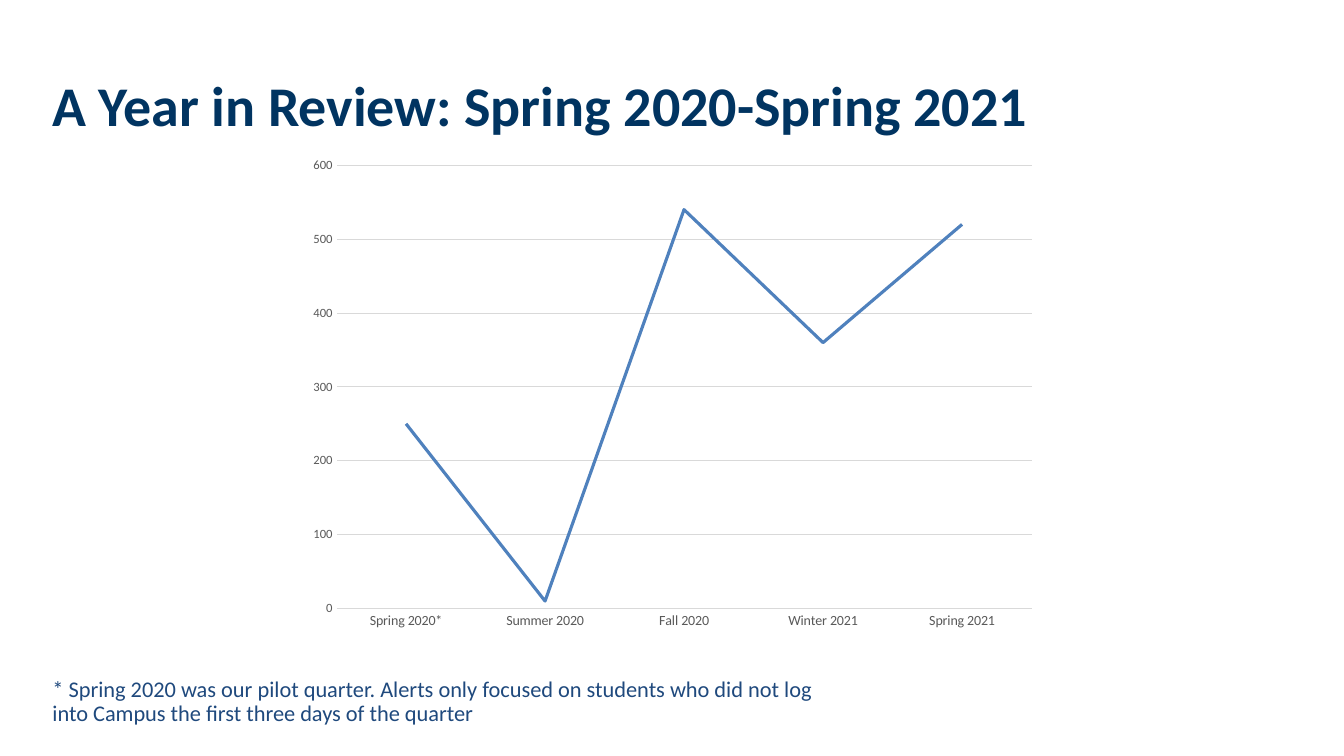
from dataclasses import dataclass

import pptx
import pptx.chart.data
import pptx.dml.color
import pptx.enum.chart
import pptx.enum.text
import pptx.util
from pptx.util import Inches


@dataclass(frozen=True)
class Theme:
    font: str = "Calibri"
    title_color: str = "013461"
    note_color: str = "1F497D"
    label_color: str = "595959"
    grid_color: str = "D9D9D9"
    line_color: str = "4F81BD"
    title_size: int = 40
    note_size: int = 16
    category_size: int = 10
    value_size: int = 9
    grid_width: float = 0.75
    line_width: float = 2.25


THEME = Theme()
MARGIN = 0.52
ALERTS = {
    "Spring 2020*": 250,
    "Summer 2020": 10,
    "Fall 2020": 540,
    "Winter 2021": 360,
    "Spring 2021": 520,
}


def rgb(color):
    return pptx.dml.color.RGBColor.from_string(color)


def style_font(font, size, color, bold=False):
    font.name = THEME.font
    font.size = pptx.util.Pt(size)
    font.color.rgb = rgb(color)
    font.bold = bold


def style_line(line, color, width):
    line.color.rgb = rgb(color)
    line.width = pptx.util.Pt(width)


def add_text(slide, area, text, *, size, color, bold=False, spacing=1.0):
    box = slide.shapes.add_textbox(*map(Inches, area))
    frame = box.text_frame
    frame.word_wrap = True
    frame.auto_size = pptx.enum.text.MSO_AUTO_SIZE.NONE
    frame.margin_left = frame.margin_right = 0
    frame.margin_top = frame.margin_bottom = 0
    para = frame.paragraphs[0]
    para.line_spacing = spacing
    span = para.add_run()
    span.text = text
    style_font(span.font, size, color, bold)


def add_alert_chart(slide, area):
    data = pptx.chart.data.CategoryChartData()
    data.categories = list(ALERTS)
    data.add_series("Series 1", list(ALERTS.values()))
    chart = slide.shapes.add_chart(
        pptx.enum.chart.XL_CHART_TYPE.LINE, *map(Inches, area), data
    ).chart
    chart.has_legend = False
    chart.has_title = False
    style_font(chart.font, THEME.category_size, THEME.label_color)
    chart.plots[0].vary_by_categories = False

    series = chart.plots[0].series[0]
    series.smooth = False
    series.marker.style = pptx.enum.chart.XL_MARKER_STYLE.NONE
    style_line(series.format.line, THEME.line_color, THEME.line_width)

    seasons, counts = chart.category_axis, chart.value_axis
    for axis, size in ((seasons, THEME.category_size), (counts, THEME.value_size)):
        axis.major_tick_mark = pptx.enum.chart.XL_TICK_MARK.NONE
        axis.minor_tick_mark = pptx.enum.chart.XL_TICK_MARK.NONE
        style_font(axis.tick_labels.font, size, THEME.label_color)
    style_line(seasons.format.line, THEME.grid_color, THEME.grid_width)
    counts.minimum_scale, counts.maximum_scale, counts.major_unit = 0, 600, 100
    counts.format.line.fill.background()
    counts.has_major_gridlines = True
    style_line(counts.major_gridlines.format.line, THEME.grid_color, THEME.grid_width)


def build_review_slide(deck):
    slide = deck.slides.add_slide(deck.slide_layouts[6])
    add_text(
        slide, (MARGIN, 0.7, 12.35, 0.67),
        "A Year in Review: Spring 2020-Spring 2021",
        size=THEME.title_size, color=THEME.title_color, bold=True,
    )
    add_alert_chart(slide, (2.96, 1.47, 7.42, 4.86))
    add_text(
        slide, (MARGIN, 6.73, 7.7, 0.51),
        "* Spring 2020 was our pilot quarter. Alerts only focused on students "
        "who did not log into Campus the first three days of the quarter",
        size=THEME.note_size, color=THEME.note_color, spacing=0.9,
    )


def main():
    deck = pptx.Presentation()
    deck.slide_width, deck.slide_height = Inches(13.33), Inches(7.5)
    build_review_slide(deck)
    deck.save("out.pptx")


if __name__ == "__main__":
    main()
